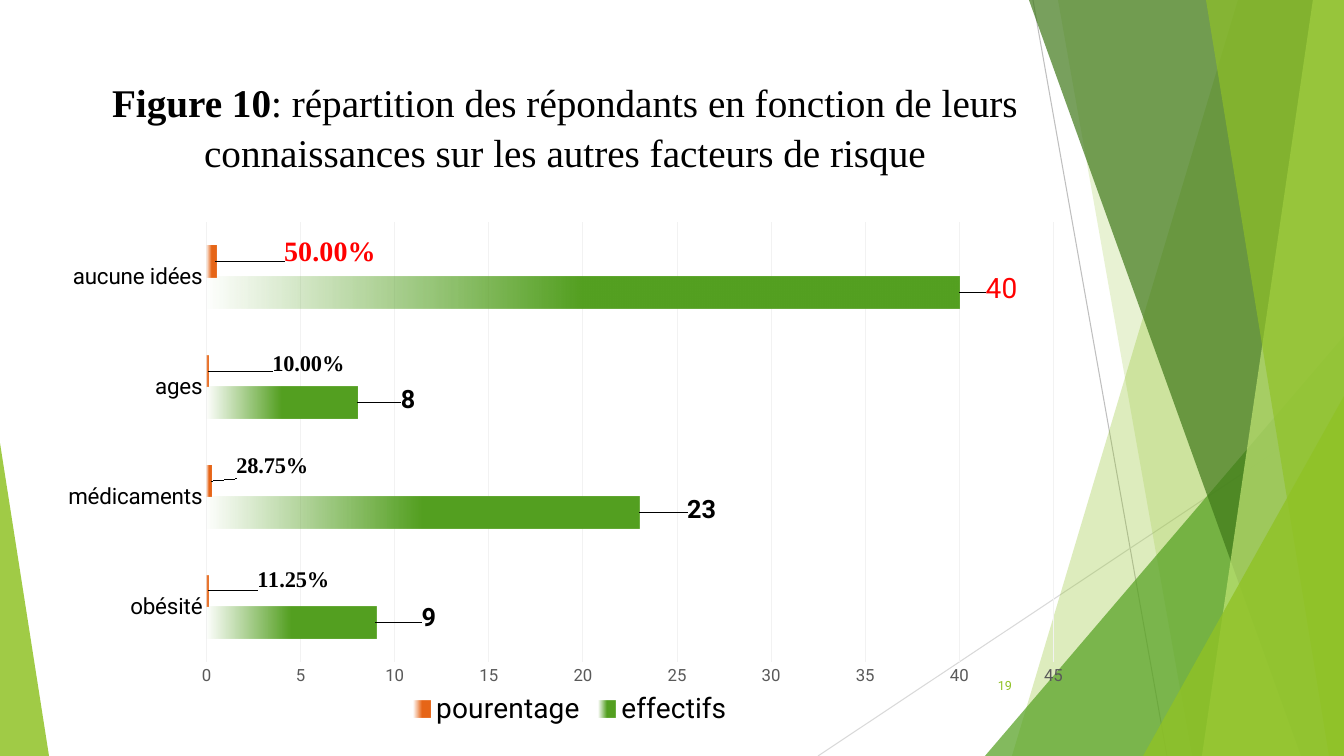
from lxml.etree import SubElement
from pptx import Presentation
from pptx.chart.data import CategoryChartData
from pptx.dml.color import RGBColor
from pptx.enum.chart import XL_CHART_TYPE, XL_LABEL_POSITION, XL_LEGEND_POSITION, XL_TICK_MARK
from pptx.enum.shapes import MSO_CONNECTOR, MSO_SHAPE
from pptx.enum.text import MSO_ANCHOR, MSO_AUTO_SIZE, PP_ALIGN
from pptx.oxml.ns import qn
from pptx.util import Pt

PX = 914400 / 100.8
LIME = RGBColor(0x90, 0xC2, 0x26)
GREEN = RGBColor(0x54, 0xA0, 0x21)
DARK_GREEN = RGBColor(0x3F, 0x78, 0x19)
PALE_GREEN = RGBColor(0xC0, 0xE4, 0x74)
ORANGE = RGBColor(0xE7, 0x66, 0x18)
RED = RGBColor(0xFF, 0x00, 0x00)
BLACK = RGBColor(0x00, 0x00, 0x00)
AXIS_GRAY = RGBColor(0x59, 0x59, 0x59)
GRID_GRAY = RGBColor(0xF2, 0xF2, 0xF2)
LINE_GRAY = RGBColor(0xBF, 0xBF, 0xBF)
LIGHT_GRAY = RGBColor(0xD9, 0xD9, 0xD9)
SANS, SERIF = "Roboto", "Times New Roman"


def set_font(font, size, color, name=SANS, bold=False):
    font.size, font.name, font.bold = Pt(size), name, bold
    font.color.rgb = color


def add_layout(parent, index, **values):
    layout = parent.find(qn("c:layout"))
    if layout is None:
        layout = parent.makeelement(qn("c:layout"))
        parent.insert(index, layout)
    manual = SubElement(layout, qn("c:manualLayout"))
    for tag, value in values.items():
        SubElement(manual, qn("c:" + tag)).set("val", str(value))


presentation = Presentation()
presentation.slide_width, presentation.slide_height = round(1344 * PX), round(756 * PX)
slide = presentation.slides.add_slide(presentation.slide_layouts[5])
shapes = slide.shapes

# Thin background lines
for x1, y1, x2, y2, color in [(1033, 0, 1167, 756, LINE_GRAY), (1344, 406, 818, 756, LIGHT_GRAY)]:
    ends = [round(value * PX) for value in (x1, y1, x2, y2)]
    connector = shapes.add_connector(MSO_CONNECTOR.STRAIGHT, *ends)
    connector.line.color.rgb = color
    connector.line.width = Pt(0.75)
    SubElement(connector._element.spPr, qn("a:effectLst"))

# Translucent facets: bands give top and bottom x, triangles give box and apex
facets = [
    ("band", (1238, 1012), LIME, 30),
    ("band", (1058, 1192), LIME, 20),
    ("triangle", (985, 336, 359, 420, 1), GREEN, 72),
    ("band", (1029, 1301), DARK_GREEN, 70),
    ("band", (1313, 1202), PALE_GREEN, 70),
    ("band", (1206, 1329), LIME, 65),
    ("triangle", (1143, 396, 201, 360, 1), LIME, 80),
    ("triangle", (0, 443, 49, 313, 0), LIME, 85),
]
for kind, geometry, color, opacity in facets:
    if kind == "band":
        top_x, bottom_x = geometry
        builder = shapes.build_freeform(top_x, 0, scale=PX)
        builder.add_line_segments([(1344, 0), (1344, 756), (bottom_x, 756)], close=True)
        facet = builder.convert_to_shape()
    else:
        *box, apex = geometry
        facet = shapes.add_shape(MSO_SHAPE.ISOSCELES_TRIANGLE, *[round(value * PX) for value in box])
        facet.adjustments[0] = apex
    facet.shadow.inherit = False
    facet.line.fill.background()
    facet.fill.solid()
    facet.fill.fore_color.rgb = color
    color_element = facet._element.spPr.find(qn("a:solidFill")).find(qn("a:srgbClr"))
    SubElement(color_element, qn("a:alpha")).set("val", str(opacity * 1000))

# Bar chart
chart_data = CategoryChartData()
chart_data.categories = ["obésité", "médicaments", "ages", "aucune idées"]
chart_data.add_series("effectifs", [9, 23, 8, 40])
chart_data.add_series("pourentage", [0.1125, 0.2875, 0.1, 0.5], number_format="0.00%")
chart_box = [round(value * PX) for value in (61, 161, 1018, 571)]
chart = shapes.add_chart(XL_CHART_TYPE.BAR_CLUSTERED, *chart_box, chart_data).chart
chart.has_title = False
set_font(chart.font, 10, BLACK)
plot_area = chart._chartSpace.chart.plotArea
add_layout(plot_area, 0, layoutTarget="inner", xMode="edge", yMode="edge",
           x=0.143, y=0.107, w=0.832, h=0.77)
plot = chart.plots[0]
plot.gap_width, plot.overlap, plot.vary_by_categories = 150, 0, False

# Axes and legend
category_axis, value_axis = chart.category_axis, chart.value_axis
for axis, size, color in [(category_axis, 16, BLACK), (value_axis, 12, AXIS_GRAY)]:
    axis.major_tick_mark = axis.minor_tick_mark = XL_TICK_MARK.NONE
    axis.format.line.fill.background()
    set_font(axis.tick_labels.font, size, color)
value_axis.minimum_scale, value_axis.maximum_scale, value_axis.major_unit = 0, 45, 5
value_axis.has_major_gridlines = True
value_axis.major_gridlines.format.line.color.rgb = GRID_GRAY
value_axis.major_gridlines.format.line.width = Pt(0.75)
chart.has_legend = True
chart.legend.position = XL_LEGEND_POSITION.BOTTOM
chart.legend.include_in_layout = False
set_font(chart.legend.font, 20, BLACK)

# Series fills and labels: custom text, size, colour, bold, shift in x and y
series_styles = [
    (GREEN, SANS, 18, [
        (None, 18, BLACK, True, 42, -4),
        (None, 18, BLACK, True, 44, -2),
        (None, 18, BLACK, True, 40, -2),
        ("40", 20, RED, False, 22, -4),
    ]),
    (ORANGE, SERIF, 16, [
        ("11.25%", 16, BLACK, True, 45, -11),
        ("28.75%", 16, BLACK, True, 20, -15),
        ("10.00%", 16, BLACK, True, 60, -7),
        ("50.00%", 20, RED, True, 64, -9),
    ]),
]
for series, (color, font_name, series_size, labels) in zip(plot.series, series_styles):
    fill = series.format.fill
    fill.gradient()
    fill.gradient_angle = 180
    for stop, position in zip(fill.gradient_stops, (0.5, 1)):
        stop.position = position
        stop.color.rgb = color
    clear_color = list(series._element.iter(qn("a:srgbClr")))[-1]
    SubElement(clear_color, qn("a:alpha")).set("val", "0")

    series.data_labels.show_value = True
    series.data_labels.position = XL_LABEL_POSITION.OUTSIDE_END
    set_font(series.data_labels.font, series_size, BLACK, SANS, True)
    for index, (text, size, label_color, bold, shift_x, shift_y) in enumerate(labels):
        label = series.points[index].data_label
        if text:
            run = label.text_frame.paragraphs[0].add_run()
            run.text = text
            font = run.font
        else:
            font = label.font
        set_font(font, size, label_color, font_name, bold)
        label.position = XL_LABEL_POSITION.OUTSIDE_END
        label_element = series._element.find(qn("c:dLbls")).findall(qn("c:dLbl"))[index]
        add_layout(label_element, 1, x=round(shift_x / 1018, 3), y=round(shift_y / 571, 3))

# Slide number
number_box = shapes.add_textbox(*[round(value * PX) for value in (947, 666, 75, 40)])
number_box.text_frame.word_wrap = True
number_box.text_frame.vertical_anchor = MSO_ANCHOR.MIDDLE
paragraph = number_box.text_frame.paragraphs[0]
paragraph.alignment = PP_ALIGN.RIGHT
run = paragraph.add_run()
run.text = "19"
set_font(run.font, 9, LIME)

# Title
title = shapes.title
title.left, title.top, title.width, title.height = [round(value * PX) for value in (40, 70, 1050, 105)]
title.text_frame.word_wrap = True
title.text_frame.auto_size = MSO_AUTO_SIZE.SHAPE_TO_FIT_TEXT
title.text_frame.vertical_anchor = MSO_ANCHOR.TOP
paragraph = title.text_frame.paragraphs[0]
paragraph.alignment = PP_ALIGN.CENTER
paragraph.line_spacing = 1.07
for text, bold in [
    ("Figure 10", True),
    (": répartition des répondants en fonction de leurs connaissances sur les autres facteurs de risque", False),
]:
    run = paragraph.add_run()
    run.text = text
    set_font(run.font, 28, BLACK, SERIF, bold)

presentation.save("out.pptx")
